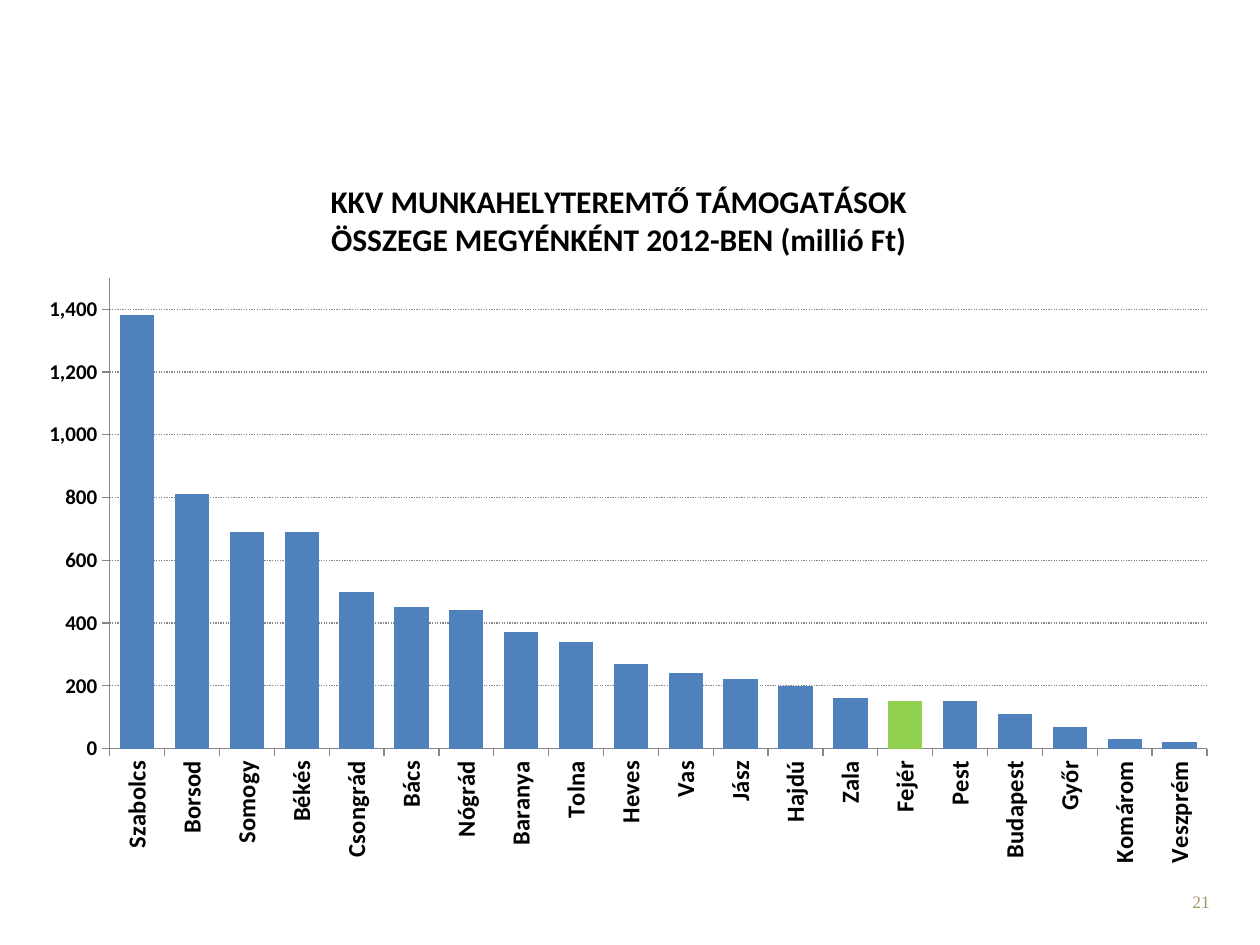
from lxml import etree
from pptx import Presentation
from pptx.chart.data import CategoryChartData
from pptx.dml.color import RGBColor
from pptx.enum.chart import XL_CHART_TYPE, XL_TICK_MARK
from pptx.enum.dml import MSO_LINE
from pptx.enum.text import PP_ALIGN
from pptx.oxml import parse_xml
from pptx.oxml.ns import nsdecls
from pptx.util import Cm, Pt

COLUMNS = XL_CHART_TYPE.COLUMN_CLUSTERED
OUTSIDE, NO_TICK = XL_TICK_MARK.OUTSIDE, XL_TICK_MARK.NONE
DOTTED = MSO_LINE.ROUND_DOT
CENTER, RIGHT = PP_ALIGN.CENTER, PP_ALIGN.RIGHT

COLORS = {"text": "000000", "bar": "4F81BD", "highlight": "92D050",
          "axis": "868686", "page": "A69765"}

TITLE_LINES = ["KKV MUNKAHELYTEREMTŐ TÁMOGATÁSOK",
               "ÖSSZEGE MEGYÉNKÉNT 2012-BEN (millió Ft)"]
PAGE_NUMBER = "21"
HIGHLIGHTED = "Fejér"
GRANTS = {
    "Szabolcs": 1380, "Borsod": 810, "Somogy": 690, "Békés": 690,
    "Csongrád": 500, "Bács": 450, "Nógrád": 440, "Baranya": 370,
    "Tolna": 340, "Heves": 270, "Vas": 240, "Jász": 220, "Hajdú": 200,
    "Zala": 160, "Fejér": 150, "Pest": 150, "Budapest": 110, "Győr": 70,
    "Komárom": 30, "Veszprém": 20,
}


def color(key):
    return RGBColor.from_string(COLORS[key])


def style_font(font, size, key="text", bold=False, name="Calibri"):
    font.size, font.bold, font.name = Pt(size), bold, name
    font.color.rgb = color(key)


def write(paragraph, text, align=CENTER, **font_format):
    paragraph.alignment = align
    run = paragraph.add_run()
    run.text = text
    style_font(run.font, **font_format)


def manual_layout(target=None, **fractions):
    """Build a chart layout element from fractions of the chart's size."""
    layout = parse_xml(f"<c:layout {nsdecls('c')}><c:manualLayout/></c:layout>")
    settings = {"layoutTarget": target} if target else {}
    settings.update(xMode="edge", yMode="edge", **fractions)
    for tag, value in settings.items():
        etree.SubElement(layout[0], f"{{{layout.nsmap['c']}}}{tag}", val=str(value))
    return layout


def replace_layout(parent, layout, position):
    for old in parent.findall(layout.tag):
        parent.remove(old)
    parent.insert(position, layout)


def style_axis(axis, size):
    axis.major_tick_mark, axis.minor_tick_mark = OUTSIDE, NO_TICK
    axis.format.line.color.rgb = color("axis")
    axis.format.line.width = Pt(0.75)
    style_font(axis.tick_labels.font, size, bold=True)


def add_grants_chart(slide):
    data = CategoryChartData(number_format="#,##0")
    data.categories = list(GRANTS)
    data.add_series("Series 1", list(GRANTS.values()))
    chart = slide.shapes.add_chart(
        COLUMNS, Cm(0.51), Cm(3.12), Cm(24.31), Cm(14.6), data).chart
    style_font(chart.font, 10)
    chart.has_legend = False

    chart.has_title = True
    title = chart.chart_title
    frame = title.text_frame
    for i, line in enumerate(TITLE_LINES):
        paragraph = frame.add_paragraph() if i else frame.paragraphs[0]
        write(paragraph, line, size=18, bold=True)
    title.include_in_layout = False
    replace_layout(title.format.fill and frame._txBody.getparent().getparent(),
                   manual_layout(x=0.25, y=0.03), 1)

    plot = chart.plots[0]
    plot.gap_width = 60
    plot.vary_by_categories = False
    bars = plot.series[0]
    bars.format.fill.solid()
    bars.format.fill.fore_color.rgb = color("bar")
    highlight = bars.points[list(GRANTS).index(HIGHLIGHTED)].format.fill
    highlight.solid()
    highlight.fore_color.rgb = color("highlight")

    counties, amounts = chart.category_axis, chart.value_axis
    style_axis(counties, 14)
    style_axis(amounts, 12)
    label_body = counties._element.txPr.bodyPr
    label_body.set("rot", "-5400000")
    label_body.set("vert", "horz")
    amounts.minimum_scale, amounts.maximum_scale = 0, 1500
    amounts.major_unit = 200
    amounts.tick_labels.number_format = "#,##0"
    amounts.tick_labels.number_format_is_linked = False
    grid = amounts.major_gridlines.format.line
    grid.color.rgb = color("axis")
    grid.width = Pt(0.75)
    grid.dash_style = DOTTED

    replace_layout(chart._chartSpace.chart.plotArea,
                   manual_layout("inner", x=0.07, y=0.17, w=0.91, h=0.65), 0)


def main():
    presentation = Presentation()
    presentation.slide_width, presentation.slide_height = Cm(25.4), Cm(19.05)
    slide = presentation.slides.add_slide(presentation.slide_layouts[6])
    add_grants_chart(slide)
    page_box = slide.shapes.add_textbox(Cm(18.72), Cm(17.83), Cm(5.92), Cm(1.02))
    page_box.text_frame.word_wrap = True
    write(page_box.text_frame.paragraphs[0], PAGE_NUMBER, align=RIGHT,
          size=10, key="page", name="Times New Roman")
    presentation.save("out.pptx")


if __name__ == "__main__":
    main()
